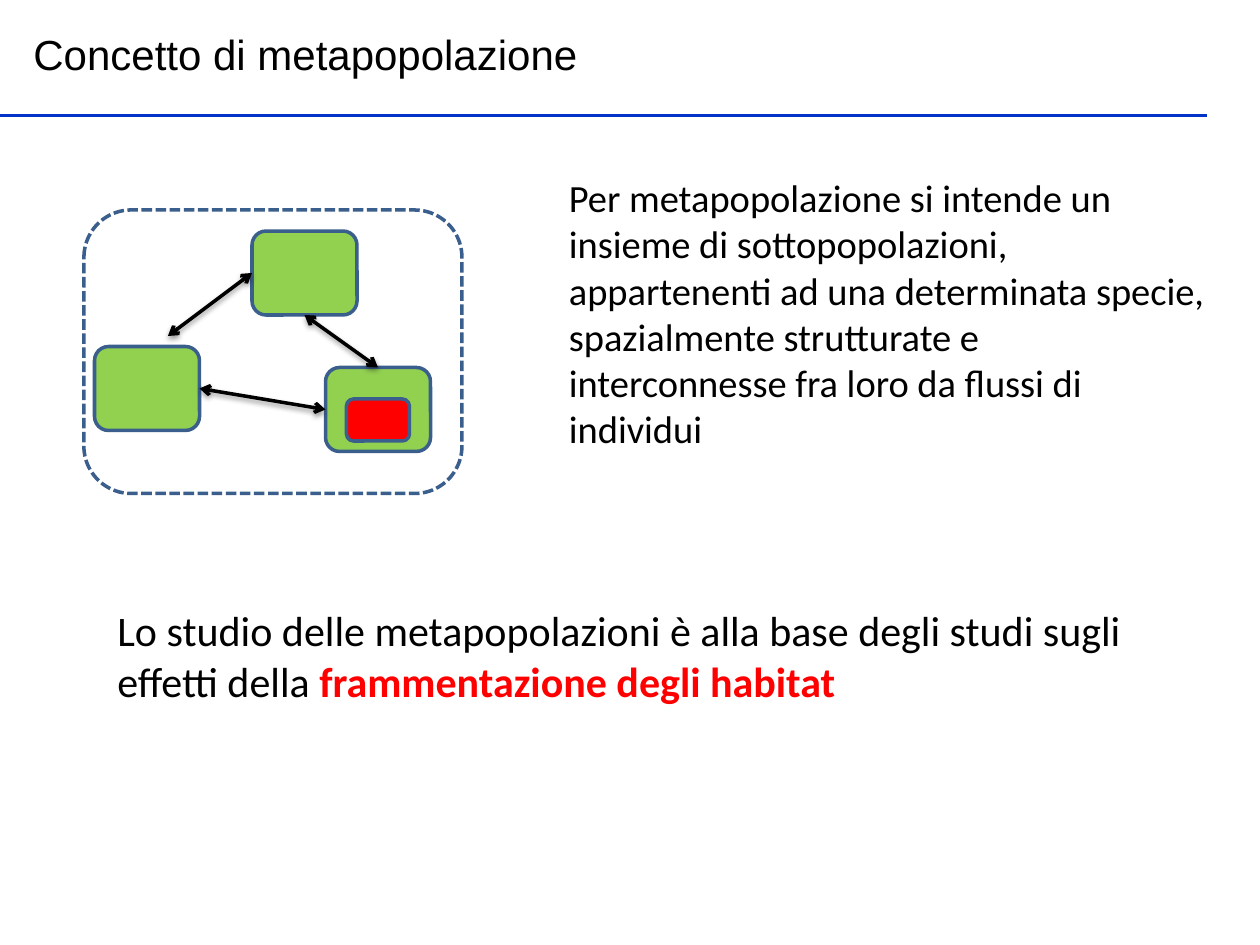
from lxml import etree
from pptx import Presentation
from pptx.dml.color import RGBColor
from pptx.enum.dml import MSO_LINE_DASH_STYLE as Dash
from pptx.enum.shapes import MSO_CONNECTOR as Connector, MSO_SHAPE as Shape
from pptx.enum.text import MSO_ANCHOR as Anchor
from pptx.oxml.ns import qn
from pptx.util import Inches, Pt

BLACK = RGBColor(0x00, 0x00, 0x00)
RED = RGBColor(0xFF, 0x00, 0x00)
GREEN = RGBColor(0x92, 0xD0, 0x50)
STEEL = RGBColor(0x3A, 0x5F, 0x8C)
BLUE = RGBColor(0x03, 0x32, 0xC9)

deck = Presentation()
deck.slide_width, deck.slide_height = Inches(10), Inches(7.5)
slide = deck.slides.add_slide(deck.slide_layouts[6])
shapes = slide.shapes
COLUMN = deck.slide_width // 120
ROW = deck.slide_height // 90


def add_patch(column, row, columns, rows, fill=None, dash=None):
    patch = shapes.add_shape(Shape.ROUNDED_RECTANGLE, column * COLUMN, row * ROW,
                             columns * COLUMN, rows * ROW)
    patch.shadow.inherit = False
    if fill is None:
        patch.fill.background()
    else:
        patch.fill.solid()
        patch.fill.fore_color.rgb = fill
    patch.line.color.rgb = STEEL
    for name, value in {"width": Pt(2), "dash_style": dash}.items():
        setattr(patch.line, name, value)
    return patch


def add_line(start, end, color):
    line = shapes.add_connector(Connector.STRAIGHT, start[0] * COLUMN, start[1] * ROW,
                                end[0] * COLUMN, end[1] * ROW)
    line.line.color.rgb = color
    line.line.width = Pt(2)
    effects = etree.SubElement(line._element.spPr, qn("a:effectLst"))
    return line, effects


add_line((0, 11), (115, 11), BLUE)

west, east, north = [add_patch(column, row, 10, 8, GREEN)
                     for column, row in ((9, 33), (31, 35), (24, 22))]

flows = [
    ((16, 32), (24, 26), None, (north, 1)),
    ((19, 37), (31, 39), (west, 3), (east, 1)),
    ((29, 30), (36, 35), (north, 2), (east, 0)),
]
for start, end, source, target in flows:
    flow, effects = add_line(start, end, BLACK)
    if source:
        flow.begin_connect(*source)
    flow.end_connect(*target)
    for tag in ("a:headEnd", "a:tailEnd"):
        etree.SubElement(flow.line._get_or_add_ln(), qn(tag), type="arrow")
    shadow = etree.SubElement(effects, qn("a:outerShdw"), blurRad=str(Pt(3.1)),
                              dist=str(Pt(1.6)), dir="5400000", rotWithShape="0")
    tint = etree.SubElement(shadow, qn("a:srgbClr"), val=str(BLACK))
    etree.SubElement(tint, qn("a:alpha"), val="38000")

add_patch(33, 38, 6, 4, RED)
add_patch(8, 20, 36, 27, dash=Dash.SQUARE_DOT)

passages = [
    ((2, 2.16, 102, 6), Anchor.MIDDLE, {"name": "Arial", "size": Pt(24)},
     [("Concetto di metapopolazione", BLACK, None)]),
    ((53, 16, 63, 27.84), Anchor.TOP, {"name": "Calibri", "size": Pt(22)},
     [("Per metapopolazione si intende un insieme di sottopopolazioni, "
       "appartenenti ad una determinata specie, spazialmente strutturate e "
       "interconnesse fra loro da flussi di individui", BLACK, None)]),
    ((10, 57, 102, 10.92), Anchor.TOP, {"name": "Calibri", "size": Pt(24)},
     [("Lo studio delle metapopolazioni è alla base degli studi sugli "
       "effetti della ", BLACK, None),
      ("frammentazione degli habitat", RED, True)]),
]
for (column, row, columns, rows), anchor, style, parts in passages:
    frame = shapes.add_textbox(int(column * COLUMN), int(row * ROW),
                               int(columns * COLUMN), int(rows * ROW)).text_frame
    for name, value in {"word_wrap": True, "vertical_anchor": anchor}.items():
        setattr(frame, name, value)
    for text, color, bold in parts:
        run = frame.paragraphs[0].add_run()
        run.text = text
        run.font.color.rgb = color
        for name, value in {**style, "bold": bold}.items():
            setattr(run.font, name, value)

deck.save("out.pptx")
